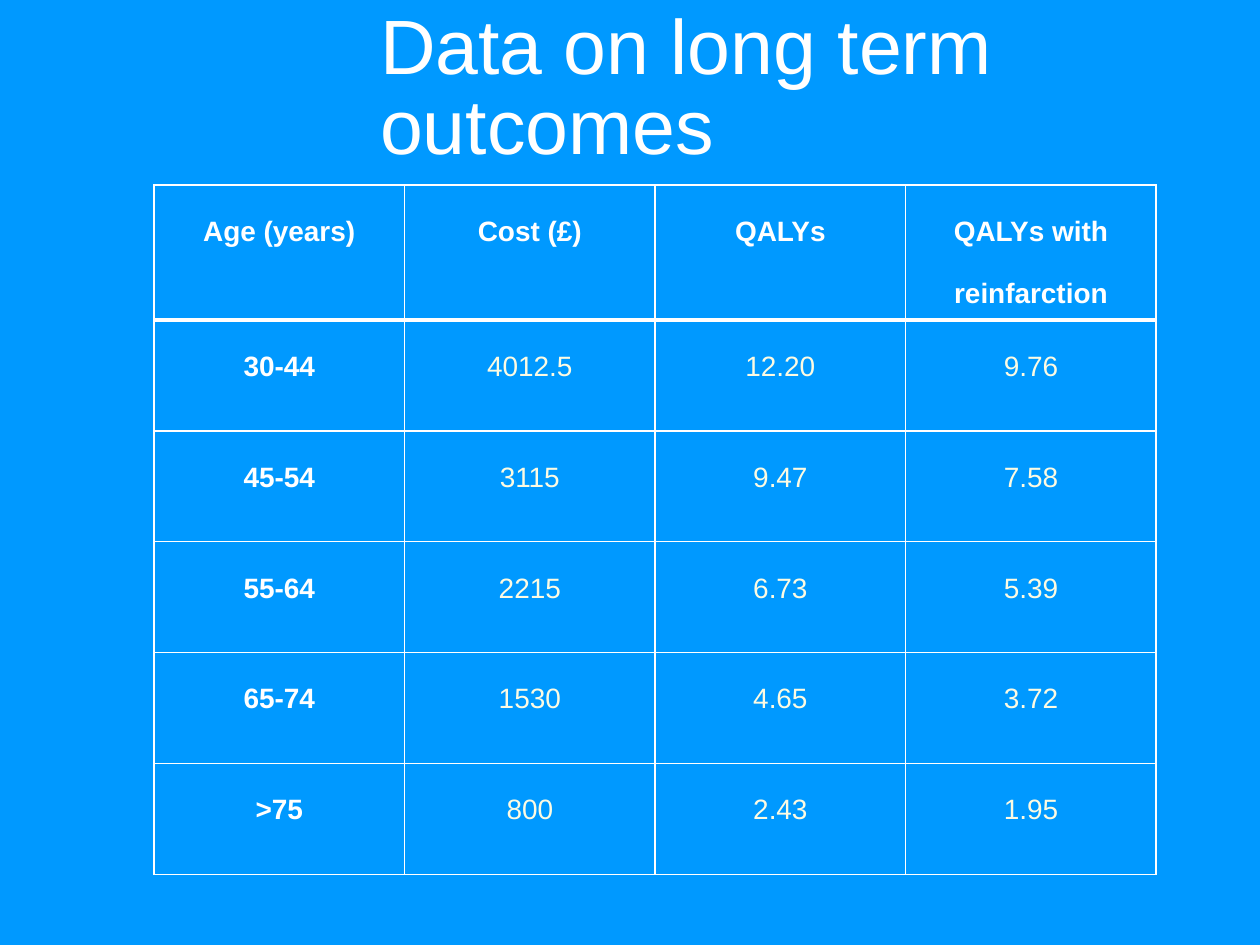
from lxml import etree
from pptx import Presentation
from pptx.dml.color import RGBColor
from pptx.enum.text import MSO_ANCHOR, MSO_AUTO_SIZE, PP_ALIGN
from pptx.oxml.ns import qn
from pptx.util import Pt

TOP = MSO_ANCHOR.TOP
LEFT, CENTER = PP_ALIGN.LEFT, PP_ALIGN.CENTER
NO_FIT = MSO_AUTO_SIZE.NONE
BLUE, WHITE, CREAM = "0099FF", "FFFFFF", "FCFBE3"

ROWS = [
    ["Age (years)", "Cost (£)", "QALYs", "QALYs with reinfarction"],
    ["30-44", "4012.5", "12.20", "9.76"],
    ["45-54", "3115", "9.47", "7.58"],
    ["55-64", "2215", "6.73", "5.39"],
    ["65-74", "1530", "4.65", "3.72"],
    [">75", "800", "2.43", "1.95"],
]


def rgb(code):
    return RGBColor.from_string(code)


class Deck:
    font = "Arial"

    def __init__(self, wide, high):
        self.prs = Presentation()
        self.prs.slide_width, self.prs.slide_height = Pt(wide), Pt(high)
        self.slide = self.prs.slides.add_slide(self.prs.slide_layouts[5])
        fill = self.slide.background.fill
        fill.solid()
        fill.fore_color.rgb = rgb(BLUE)

    def style(self, para, size, color, bold, align, lines):
        para.alignment, para.line_spacing = align, lines
        for run in para.runs:
            font = run.font
            font.name, font.size, font.bold = self.font, Pt(size), bold
            font.color.rgb = rgb(color)

    def title(self, text, x, y, w, h):
        box = self.slide.shapes.title
        box.left, box.top, box.width, box.height = Pt(x), Pt(y), Pt(w), Pt(h)
        frame = box.text_frame
        frame.text = text
        frame.word_wrap, frame.auto_size = True, NO_FIT
        frame.vertical_anchor = TOP
        self.style(frame.paragraphs[0], 44, WHITE, False, LEFT, 0.87)

    def border(self, cell, bottom):
        props = cell._tc.get_or_add_tcPr()
        sides = [("L", 1), ("R", 1), ("T", 1), ("B", bottom)]
        for spot, (side, width) in enumerate(sides):
            line = etree.Element(qn("a:ln" + side), w=str(Pt(width)))
            solid = etree.SubElement(line, qn("a:solidFill"))
            etree.SubElement(solid, qn("a:srgbClr"), val=WHITE)
            props.insert(spot, line)

    def table(self, rows, x, y, col, head, body):
        high = head + body * (len(rows) - 1)
        grid = self.slide.shapes.add_table(
            len(rows), len(rows[0]), Pt(x), Pt(y),
            Pt(col * len(rows[0])), Pt(high)).table
        for column in grid.columns:
            column.width = Pt(col)
        for r, row in enumerate(rows):
            grid.rows[r].height = Pt(body if r else head)
            for c, text in enumerate(row):
                cell = grid.cell(r, c)
                cell.text_frame.text = text
                cell.vertical_anchor = TOP
                cell.margin_left = cell.margin_right = Pt(5)
                cell.margin_top = cell.margin_bottom = 0
                cell.fill.background()
                # Header row and first column are bold white
                key = r == 0 or c == 0
                self.style(cell.text_frame.paragraphs[0], 16,
                           WHITE if key else CREAM, key, CENTER, 2.0)
                # Adjoining edges agree: heavy rule under the header
                self.border(cell, 1 if r else 3)
                if r == 1:
                    cell._tc.tcPr.find(qn("a:lnT")).set("w", str(Pt(3)))


def main():
    deck = Deck(720, 540)
    # Heading
    deck.title("Data on long term outcomes", 210, 2, 453.6, 62.6)
    # Outcomes by age group
    deck.table(ROWS, 88, 105.8, 143.2, 77, 63.4)
    deck.prs.save("out.pptx")


if __name__ == "__main__":
    main()
